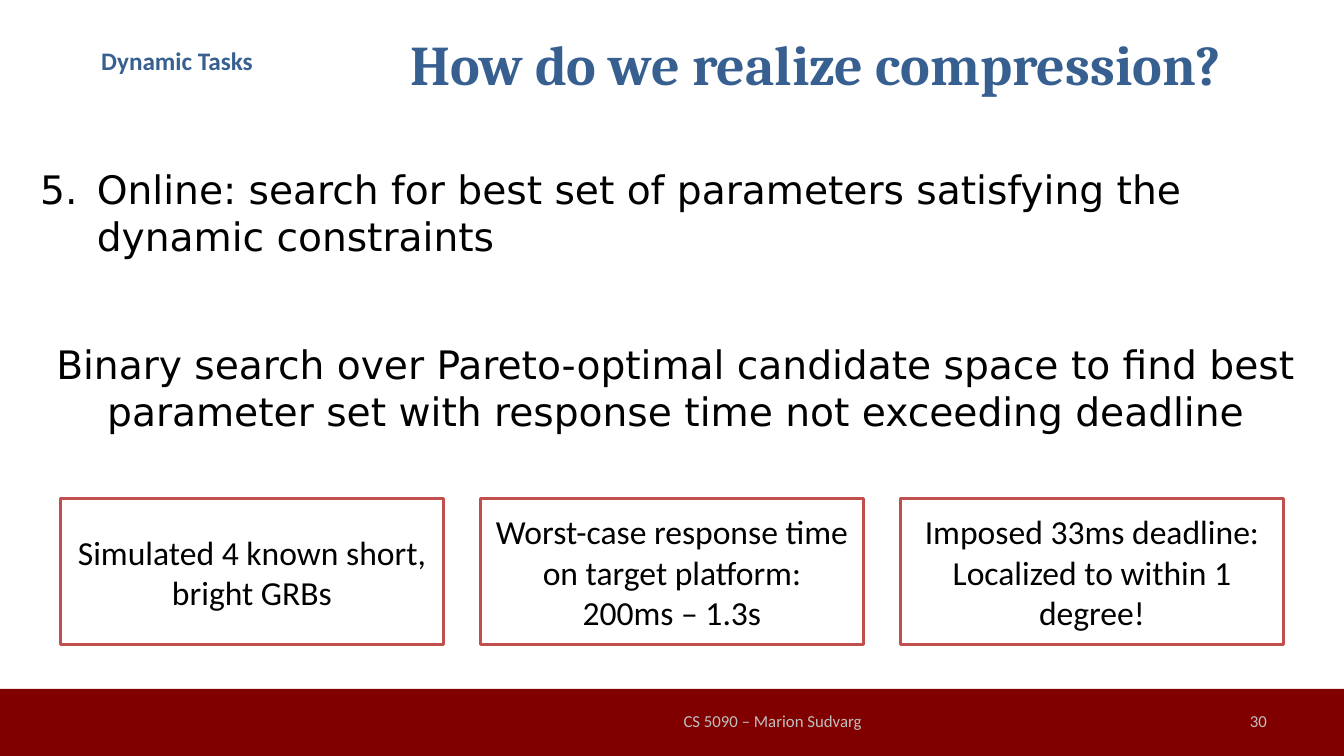
from lxml import etree
from pptx import Presentation
from pptx.dml.color import RGBColor
from pptx.enum.shapes import MSO_SHAPE
from pptx.enum.text import MSO_ANCHOR, PP_ALIGN
from pptx.oxml.ns import qn
from pptx.util import Pt

RECT = MSO_SHAPE.RECTANGLE
TOP, MIDDLE = MSO_ANCHOR.TOP, MSO_ANCHOR.MIDDLE
LEFT, CENTER, RIGHT = PP_ALIGN.LEFT, PP_ALIGN.CENTER, PP_ALIGN.RIGHT

COLORS = {"white": "FFFFFF", "black": "000000", "blue": "376091",
          "maroon": "800000", "red": "C0504D", "gray": "BFBFBF"}
FORMATS = {
    "title": {"name": "Cambria", "size": Pt(40), "bold": True},
    "topic": {"name": "Calibri", "size": Pt(18), "bold": True},
    "body": {"name": "DejaVu Sans", "size": Pt(28), "bold": False},
    "card": {"name": "Calibri", "size": Pt(24), "bold": False},
    "footer": {"name": "Calibri", "size": Pt(12), "bold": False},
}


def rgb(color):
    return RGBColor.from_string(COLORS[color])


def write(sp, lines, style, color, align, anchor):
    tf = sp.text_frame
    tf.word_wrap = True
    tf.vertical_anchor = anchor
    for i, line in enumerate(lines):
        p = tf.paragraphs[0] if i == 0 else tf.add_paragraph()
        p.alignment = align
        r = p.add_run()
        r.text = line
        for key, value in FORMATS[style].items():
            setattr(r.font, key, value)
        r.font.color.rgb = rgb(color)
    return tf


prs = Presentation()
prs.slide_width, prs.slide_height = Pt(960), Pt(540)
s = prs.slides.add_slide(prs.slide_layouts[6])

# Footer band
band = s.shapes.add_shape(RECT, 0, Pt(492), Pt(960), Pt(48))
band.shadow.inherit = False
band.fill.solid()
band.fill.fore_color.rgb = rgb("maroon")
band.line.fill.background()

# Title, topic and footer texts
labels = [
    ("30", (688, 500.5, 224, 28.8), "footer", "gray", RIGHT, MIDDLE),
    ("CS 5090 – Marion Sudvarg", (400, 500.5, 304, 28.8), "footer", "gray", CENTER, MIDDLE),
    ("How do we realize compression?", (222.5, 0, 720.5, 90), "title", "blue", CENTER, MIDDLE),
    ("Dynamic Tasks", (48, 29, 157, 29), "topic", "blue", CENTER, TOP),
]
for text, box, style, color, align, anchor in labels:
    sp = s.shapes.add_textbox(*map(Pt, box))
    write(sp, [text], style, color, align, anchor)

# Body: numbered step and its explanation
body = s.shapes.add_textbox(Pt(21.6), Pt(114.5), Pt(921.6), Pt(368))
tf = write(body, [
    "Online: search for best set of parameters satisfying the dynamic constraints",
    "Binary search over Pareto-optimal candidate space to find best "
    "parameter set with response time not exceeding deadline",
], "body", "black", LEFT, TOP)
step, method = tf.paragraphs
pPr = step._p.get_or_add_pPr()
pPr.set("marL", str(Pt(40.5)))
pPr.set("indent", str(-Pt(40.5)))
etree.SubElement(pPr, qn("a:buFont"), typeface="+mj-lt")
etree.SubElement(pPr, qn("a:buAutoNum"), type="arabicPeriod", startAt="5")
method.alignment = CENTER
method.space_before = Pt(58)

# Result cards
cards = [
    ["Simulated 4 known short, bright GRBs"],
    ["Worst-case response time on target platform:", "200ms – 1.3s"],
    ["Imposed 33ms deadline:", "Localized to within 1 degree!"],
]
for i, lines in enumerate(cards):
    sp = s.shapes.add_shape(RECT, Pt(43.2 + 300 * i), Pt(356.2), Pt(273.6), Pt(104.4))
    sp.shadow.inherit = False
    sp.fill.solid()
    sp.fill.fore_color.rgb = rgb("white")
    sp.line.color.rgb = rgb("red")
    sp.line.width = Pt(2)
    write(sp, lines, "card", "black", CENTER, MIDDLE)

prs.save("out.pptx")
